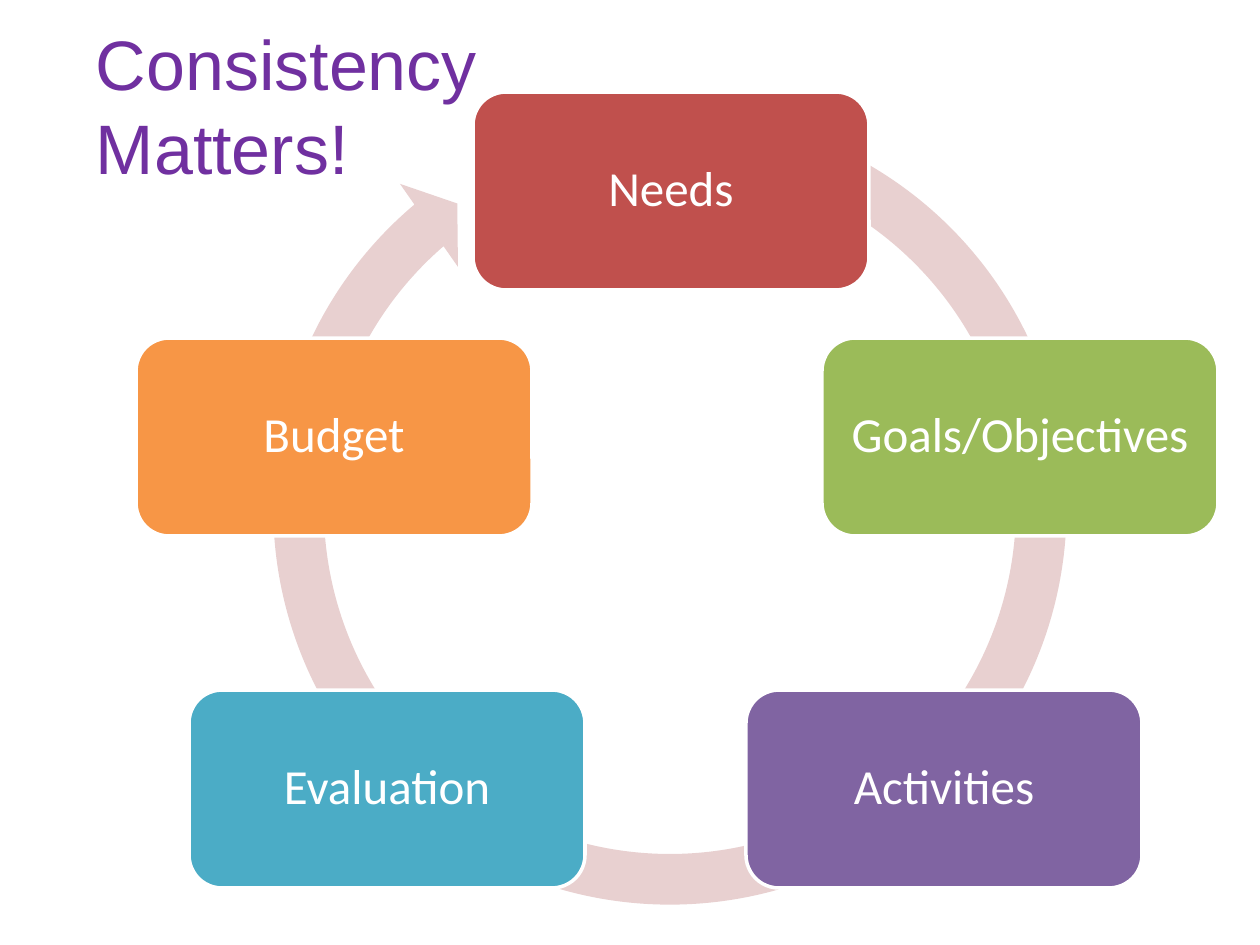
import dataclasses

import pptx
import pptx.dml.color
import pptx.enum.shapes
import pptx.enum.text
import pptx.util


@dataclasses.dataclass(frozen=True)
class Theme:
    """Colours, fonts and type sizes of the slide."""
    title_color: str = "7030A0"
    light: str = "FFFFFF"
    ring: str = "E8D0D0"
    needs: str = "C0504D"
    goals: str = "9BBB59"
    activities: str = "8064A2"
    evaluation: str = "4BACC6"
    budget: str = "F79646"
    title_font: str = "Arial"
    step_font: str = "Calibri"
    title_size: int = 40
    step_size: int = 28
    outline: int = 2


class CycleSlide:
    """Draws the elements of a cycle on the current slide."""

    def __init__(self, slide, theme):
        self.slide = slide
        self.theme = theme

    def px(self, *lengths):
        return [pptx.util.Emu(round(length * 914400 / 126)) for length in lengths]

    def color(self, value):
        return pptx.dml.color.RGBColor.from_string(value)

    def apply(self, target, values):
        for name, value in values.items():
            setattr(target, name, value)

    def label(self, shape, text, inset, font, size, color, **paragraph_format):
        frame = shape.text_frame
        margin, = self.px(inset)
        self.apply(frame, {
            "text": text,
            "word_wrap": True,
            "vertical_anchor": pptx.enum.text.MSO_ANCHOR.MIDDLE,
            "margin_left": margin,
            "margin_right": margin,
            "margin_top": margin,
            "margin_bottom": margin,
        })
        paragraph = frame.paragraphs[0]
        self.apply(paragraph, paragraph_format)
        for run in paragraph.runs:
            self.apply(run.font, {"name": font, "size": pptx.util.Pt(size)})
            run.font.color.rgb = self.color(color)

    def shape(self, kind, box, fill):
        shape = self.slide.shapes.add_shape(kind, *self.px(*box))
        shape.shadow.inherit = False
        shape.fill.solid()
        shape.fill.fore_color.rgb = self.color(fill)
        return shape

    def title(self, text, box):
        shape = self.slide.shapes.add_textbox(*self.px(*box))
        theme = self.theme
        self.label(shape, text, 12, theme.title_font, theme.title_size,
                   theme.title_color, alignment=pptx.enum.text.PP_ALIGN.LEFT)

    def ring(self, box, adjustments):
        kind = pptx.enum.shapes.MSO_SHAPE.CIRCULAR_ARROW
        shape = self.shape(kind, box, self.theme.ring)
        shape.line.fill.background()
        for index, value in enumerate(adjustments):
            shape.adjustments[index] = value

    def step(self, text, box, fill):
        theme = self.theme
        kind = pptx.enum.shapes.MSO_SHAPE.ROUNDED_RECTANGLE
        shape = self.shape(kind, box, fill)
        shape.line.color.rgb = self.color(theme.light)
        shape.line.width = pptx.util.Pt(theme.outline)
        self.label(shape, text, 15, theme.step_font, theme.step_size, theme.light,
                   alignment=pptx.enum.text.PP_ALIGN.CENTER, line_spacing=0.9)


def main():
    presentation = pptx.Presentation()
    presentation.slide_width = pptx.util.Inches(10)
    presentation.slide_height = pptx.util.Inches(7.5)
    theme = Theme()
    cycle = CycleSlide(presentation.slides.add_slide(presentation.slide_layouts[6]), theme)

    cycle.title("Consistency\vMatters!", (84, -21, 441, 252))
    cycle.ring((248, 86, 844, 844), (0.06, 3.31, 137.73, 173.88, 0.06))

    top, middle, bottom = 92, 338, 690
    steps = (
        ("Needs", 473, top, theme.needs),
        ("Goals/Objectives", 822, middle, theme.goals),
        ("Activities", 746, bottom, theme.activities),
        ("Evaluation", 189, bottom, theme.evaluation),
        ("Budget", 136, middle, theme.budget),
    )
    for text, left, step_top, fill in steps:
        cycle.step(text, (left, step_top, 396, 198), fill)

    presentation.save("out.pptx")


if __name__ == "__main__":
    main()
